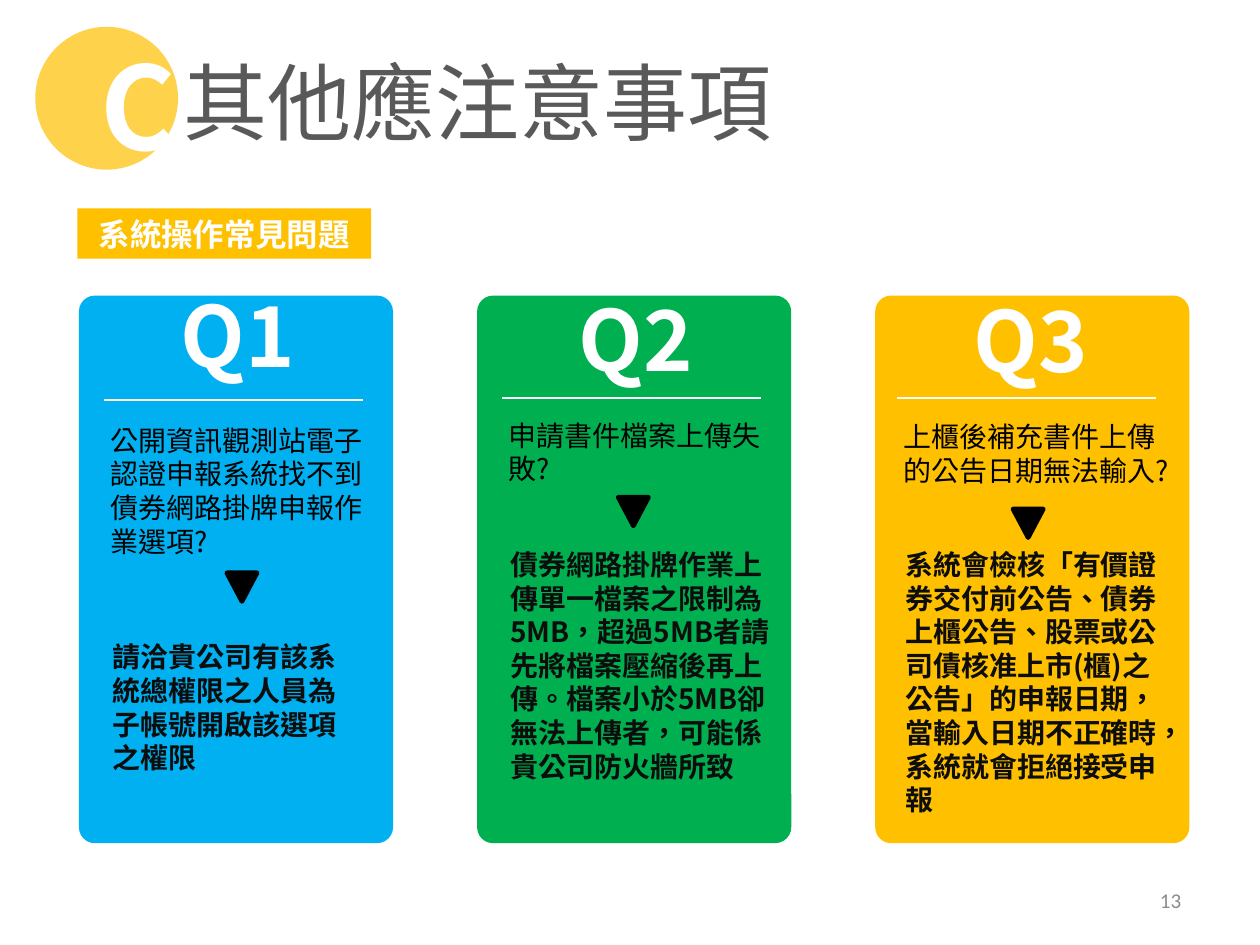
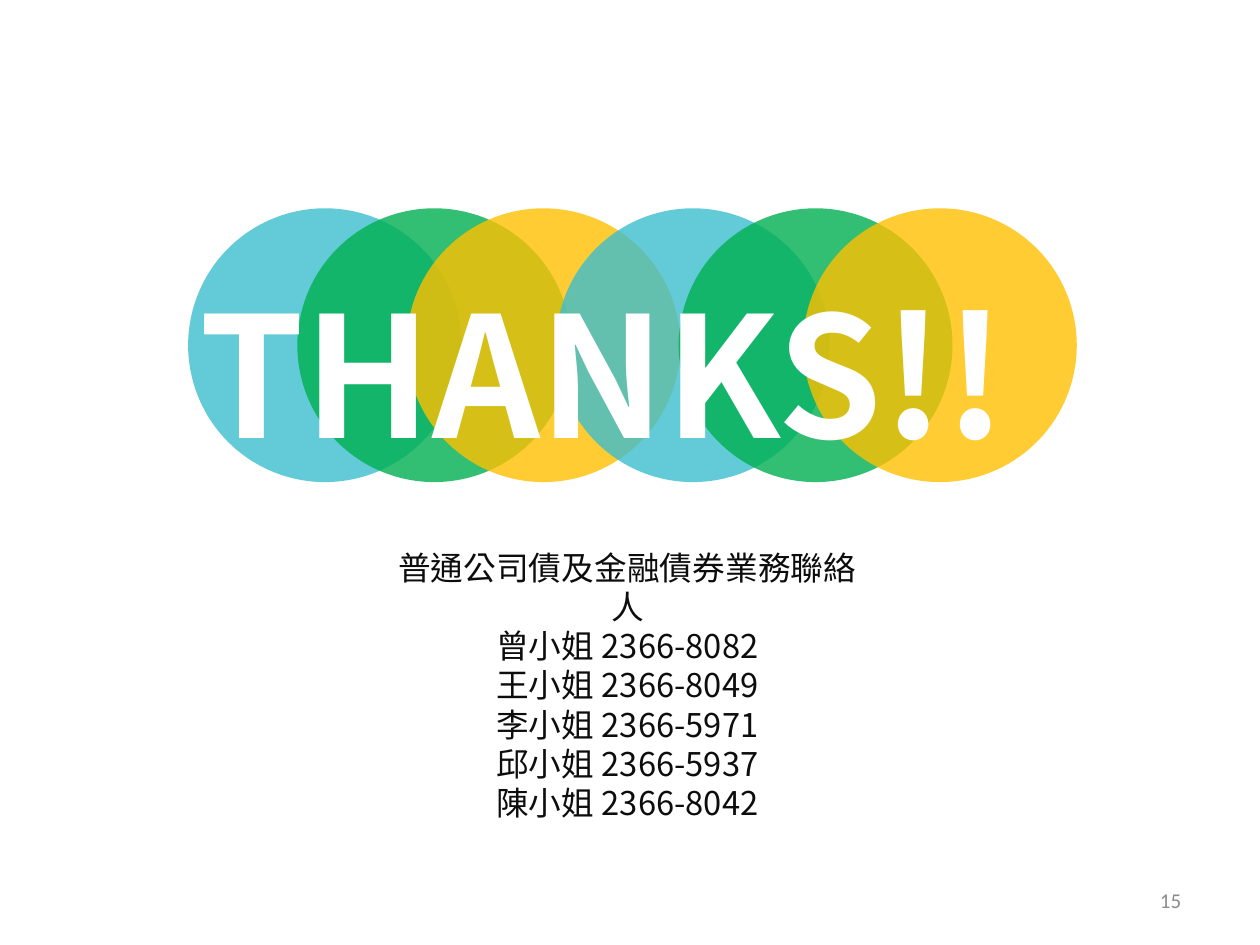
from pptx import Presentation
from pptx.dml.color import RGBColor
from pptx.enum import shapes, text
from pptx.oxml import ns, xmlchemy
from pptx.util import Inches, Pt

WHITE = RGBColor(0xFF, 0xFF, 0xFF)
BLACK = RGBColor(0, 0, 0)
INK = RGBColor(0x0D, 0x0D, 0x0D)
DARK = RGBColor(0x59, 0x59, 0x59)
GRAY = RGBColor(0x8C, 0x8C, 0x8C)
BLUE = RGBColor(0x00, 0xB0, 0xF0)
TEAL = RGBColor(0x3D, 0xBE, 0xCF)
GREEN = RGBColor(0x00, 0xB0, 0x50)
GOLD = RGBColor(0xFF, 0xC0, 0x00)
SANS = "Noto Sans CJK SC"
FORM = shapes.MSO_SHAPE
LEFT, MID, RIGHT = text.PP_ALIGN.LEFT, text.PP_ALIGN.CENTER, text.PP_ALIGN.RIGHT
TOP, HALF = text.MSO_ANCHOR.TOP, text.MSO_ANCHOR.MIDDLE


def write(box, at, words, size, ink, bold=False, align=LEFT, anchor=TOP, face=SANS):
    box.left, box.top, box.width, box.height = [Inches(v) for v in at]
    frame = box.text_frame
    frame.text = words
    frame.word_wrap = True
    frame.auto_size = text.MSO_AUTO_SIZE.NONE
    frame.vertical_anchor = anchor
    for para in frame.paragraphs:
        para.alignment = align
        para.space_before = Pt(0)
        for run in para.runs:
            font = run.font
            font.size, font.bold, font.name = Pt(size), bold, face
            font.color.rgb = ink
            props = run._r.get_or_add_rPr()
            props.set("lang", "zh-TW")
            east = xmlchemy.OxmlElement("a:ea")
            east.set("typeface", face)
            props.find(ns.qn("a:latin")).addnext(east)


def draw(slide, form, at, fill, alpha=100):
    shape = slide.shapes.add_shape(form, *[Inches(v) for v in at])
    shape.shadow.inherit = False
    shape.fill.solid()
    shape.fill.fore_color.rgb = fill
    shape.line.fill.background()
    if alpha < 100:
        node = xmlchemy.OxmlElement("a:alpha")
        node.set("val", str(alpha * 1000))
        shape._element.spPr.find(ns.qn("a:solidFill"))[0].append(node)
    return shape


deck = Presentation()
deck.slide_width = Inches(7.5)
deck.slide_height = deck.slide_width * 3 // 4

faq = deck.slides.add_slide(deck.slide_layouts[5])
end = deck.slides.add_slide(deck.slide_layouts[1])

draw(faq, FORM.OVAL, (0.21, 0.16, 0.85, 0.85), GOLD, 70)
mark = faq.shapes.add_textbox(0, 0, 0, 0)
write(mark, (0.5, 0.16, 0.67, 0.93), "C", 49.5, WHITE, True)
write(faq.shapes.title, (0.99, 0.25, 3.74, 0.71), "其他應注意事項", 36, DARK)
tag = draw(faq, FORM.RECTANGLE, (0.46, 1.24, 1.75, 0.3), GOLD)
write(tag, (0.46, 1.24, 1.75, 0.3), "系統操作常見問題", 13.5, WHITE, True, MID, HALF)

cards = [
    (BLUE, 0.47, 1.64, 2.38, 2.47, (1.35, 3.41), 3.76, 1.69,
     "公開資訊觀測站電子認證申報系統找不到債券網路掛牌申報作業選項?",
     "請洽貴公司有該系統總權限之人員為子帳號開啟該選項之權限"),
    (GREEN, 2.84, 1.66, 2.37, 2.44, (3.68, 2.96), 3.21, 1.76,
     "申請書件檔案上傳失敗?",
     "債券網路掛牌作業上傳單一檔案之限制為5MB，超過5MB者請先將檔案壓縮後再上傳。"
     "檔案小於5MB卻無法上傳者，可能係貴公司防火牆所致"),
    (GOLD, 5.19, 1.67, 2.37, 2.45, (6.03, 3.03), 3.21, 1.76,
     "上櫃後補充書件上傳的公告日期無法輸入?",
     "系統會檢核「有價證券交付前公告、債券上櫃公告、股票或公司債核准上市(櫃)之公告」"
     "的申報日期，當輸入日期不正確時，系統就會拒絕接受申報"),
]
for i, (fill, x, head, rule, ask, tip, reply, wide, query, answer) in enumerate(cards):
    card = draw(faq, FORM.ROUNDED_RECTANGLE, (0.47 + 2.37 * i, 1.76, 1.87, 3.26), fill)
    card.adjustments[0] = 0.051
    label = faq.shapes.add_textbox(0, 0, 0, 0)
    write(label, (x + 0.48, head, 0.93, 0.71), f"Q{i + 1}", 36, WHITE, True, MID)
    line = faq.shapes.add_connector(
        shapes.MSO_CONNECTOR.STRAIGHT,
        Inches(x + 0.15), Inches(rule), Inches(x + 1.69), Inches(rule))
    line.line.color.rgb = WHITE
    line.line.width = Pt(0.75)
    line._element.spPr.append(xmlchemy.OxmlElement("a:effectLst"))
    body = faq.shapes.add_textbox(0, 0, 0, 0)
    write(body, (x + 0.09, ask, 1.71, 0.91), query, 12, BLACK)
    arrow = draw(faq, FORM.ISOSCELES_TRIANGLE, (*tip, 0.18, 0.17), BLACK)
    arrow.rotation = 180
    arrow.line.color.rgb = BLACK
    arrow.line.width = Pt(2)
    body = faq.shapes.add_textbox(0, 0, 0, 0)
    write(body, (x + 0.1, reply, wide, 1.72), answer, 12, INK, True)

for i, x in enumerate((1.12, 1.77, 2.42, 3.31, 4.04, 4.78)):
    draw(end, FORM.OVAL, (x, 1.24, 1.63, 1.63), (TEAL, GREEN, GOLD)[i % 3], 80)
title = end.shapes.title
write(title, (1.09, 1.56, 5.29, 1.31), "THANKS!!", 72, WHITE, True)
end.shapes._spTree.append(title._element)

staff = [("曾", "2366-8082"), ("王", "2366-8049"), ("李", "2366-5971"),
         ("邱", "2366-5937"), ("陳", "2366-8042")]
rows = ["普通公司債及金融債券業務聯絡人"] + [f"{name}小姐 {phone}" for name, phone in staff]
team = end.placeholders[1]
write(team, (2.18, 3.21, 3.11, 1.73), "\n".join(rows), 14, INK, align=MID)
for para in team.text_frame.paragraphs:
    props = para._p.get_or_add_pPr()
    props.set("marL", "0")
    props.set("indent", "0")
    props.append(xmlchemy.OxmlElement("a:buNone"))

for slide, number in ((faq, "13"), (end, "15")):
    foot = slide.shapes.add_textbox(0, 0, 0, 0)
    write(foot, (5.38, 5.21, 1.75, 0.3), number, 9, GRAY, False, RIGHT, HALF, "Calibri")

deck.save("out.pptx")
